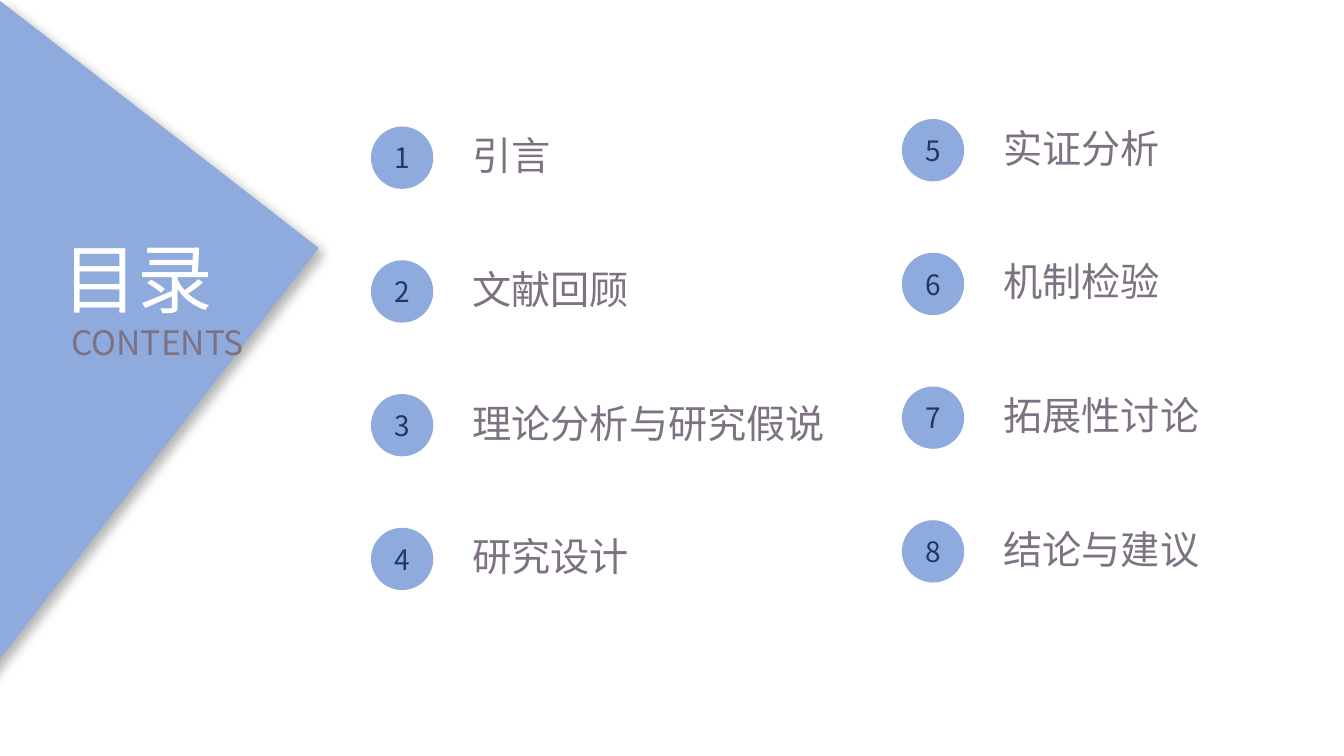
import pptx
import pptx.dml.color
import pptx.enum.shapes
import pptx.enum.text
import pptx.oxml
import pptx.oxml.ns
import pptx.util

Cm = pptx.util.Cm
FONT = "Noto Sans CJK SC"
BLUE, NAVY, MAUVE, WHITE = "8FAADC", "203864", "7E7182", "FFFFFF"
ROW_PITCH = 3.37
CIRCLE_SIZE = 1.57
LABEL_OFFSET = 2.31
LABEL_HEIGHT = 1.45
SHADOW = (
    f'<a:effectLst {pptx.oxml.ns.nsdecls("a")}>'
    '<a:outerShdw blurRad="101600" dist="76200" dir="2700000" algn="tl" rotWithShape="0">'
    '<a:srgbClr val="000000"><a:alpha val="30000"/></a:srgbClr>'
    '</a:outerShdw></a:effectLst>'
)


def color(value):
    return pptx.dml.color.RGBColor.from_string(value)


def write_text(shape, text, size, fill, centered=False):
    paragraph = shape.text_frame.paragraphs[0]
    if centered:
        paragraph.alignment = pptx.enum.text.PP_ALIGN.CENTER
        shape.text_frame.vertical_anchor = pptx.enum.text.MSO_ANCHOR.MIDDLE
    run = paragraph.add_run()
    run.text = text
    run.font.size = pptx.util.Pt(size)
    run.font.name = FONT
    run.font.color.rgb = color(fill)
    # East Asian typeface
    east_asian = pptx.oxml.parse_xml(
        f'<a:ea {pptx.oxml.ns.nsdecls("a")} typeface="{FONT}"/>')
    run.font._element.find(pptx.oxml.ns.qn("a:latin")).addnext(east_asian)


def add_text(slide, text, left, top, width, height, **text_format):
    box = slide.shapes.add_textbox(Cm(left), Cm(top), Cm(width), Cm(height))
    box.text_frame.word_wrap = False
    box.text_frame.auto_size = pptx.enum.text.MSO_AUTO_SIZE.SHAPE_TO_FIT_TEXT
    write_text(box, text, **text_format)


def add_blue_shape(slide, kind, left, top, width, height):
    shape = slide.shapes.add_shape(kind, Cm(left), Cm(top), Cm(width), Cm(height))
    shape.shadow.inherit = False
    shape.fill.solid()
    shape.fill.fore_color.rgb = color(BLUE)
    shape.line.fill.background()
    return shape


def add_title_panel(slide, left, top):
    # Tilted triangle with a soft shadow
    triangle = add_blue_shape(
        slide, pptx.enum.shapes.MSO_SHAPE.RIGHT_TRIANGLE,
        left - 8.1, top + 3.96, 15.01, 10.19)
    triangle.rotation = 127.8
    properties = triangle._element.spPr
    properties.find(pptx.oxml.ns.qn("a:xfrm")).set("flipV", "1")
    effects = properties.find(pptx.oxml.ns.qn("a:effectLst"))
    properties.replace(effects, pptx.oxml.parse_xml(SHADOW))

    # Heading and its translation
    add_text(slide, "目录", left + 1.32, top + 5.72, 4.37, 2.57, size=54, fill=WHITE)
    add_text(slide, "CONTENTS", left + 1.55, top + 7.98, 5.21, 1.27, size=24, fill=MAUVE)


def add_contents_column(slide, left, top, first_number, labels):
    for row, label in enumerate(labels):
        row_top = top + row * ROW_PITCH
        circle = add_blue_shape(
            slide, pptx.enum.shapes.MSO_SHAPE.OVAL,
            left, row_top, CIRCLE_SIZE, CIRCLE_SIZE)
        write_text(circle, str(first_number + row), size=20, fill=NAVY, centered=True)
        label_width = 0.51 + 0.99 * len(label)
        add_text(slide, label, left + LABEL_OFFSET, row_top, label_width, LABEL_HEIGHT,
                 size=28, fill=MAUVE)


def main():
    presentation = pptx.Presentation()
    presentation.slide_width = Cm(33.87)
    presentation.slide_height = Cm(19.05)
    slide = presentation.slides.add_slide(presentation.slide_layouts[6])
    add_title_panel(slide, 0, 0)
    add_contents_column(slide, 9.35, 3.19, 1,
                        ["引言", "文献回顾", "理论分析与研究假说", "研究设计"])
    add_contents_column(slide, 22.73, 3.0, 5,
                        ["实证分析", "机制检验", "拓展性讨论", "结论与建议"])
    presentation.save("out.pptx")


if __name__ == "__main__":
    main()
